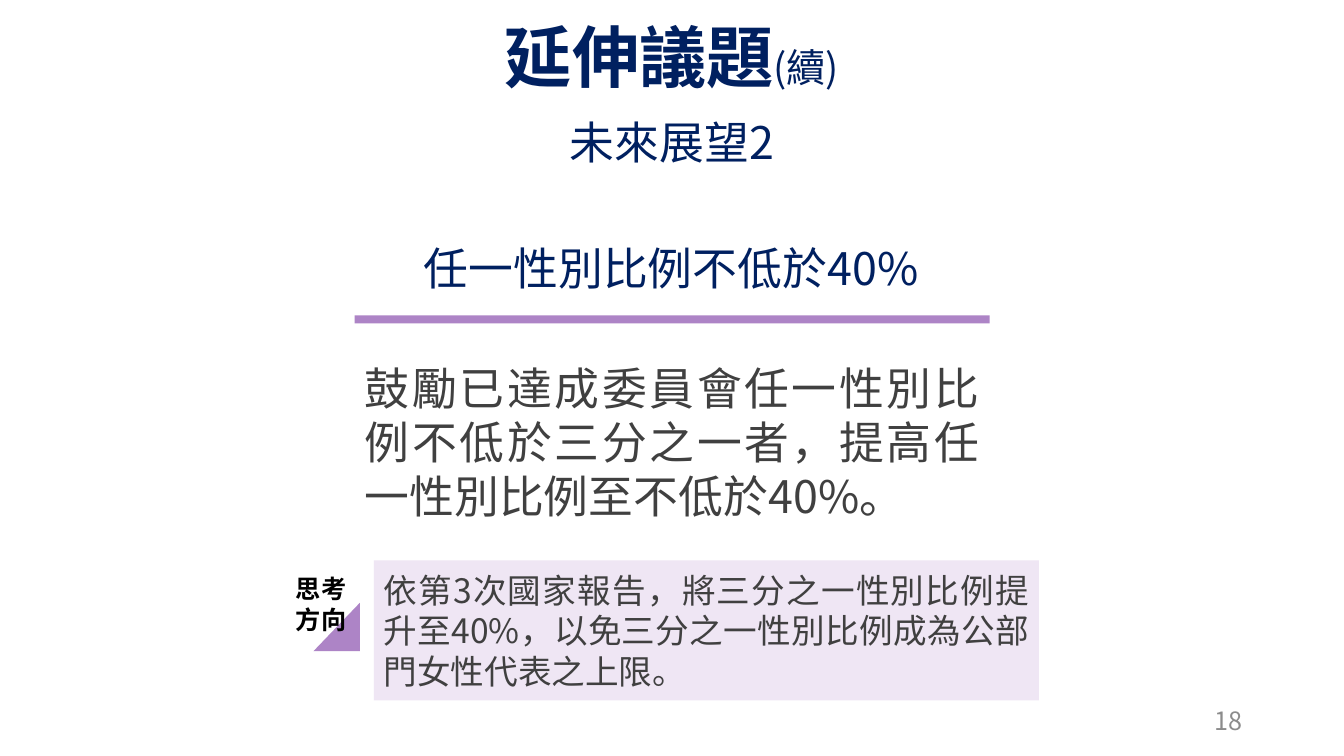
from lxml import etree
from pptx import Presentation
from pptx.dml.color import RGBColor
from pptx.enum.shapes import MSO_SHAPE
from pptx.enum.text import MSO_ANCHOR, PP_ALIGN
from pptx.oxml.ns import qn
from pptx.util import Cm, Pt

RECT, TRIANGLE = MSO_SHAPE.RECTANGLE, MSO_SHAPE.ISOSCELES_TRIANGLE
TOP, MIDDLE = MSO_ANCHOR.TOP, MSO_ANCHOR.MIDDLE
LEFT, CENTER = PP_ALIGN.LEFT, PP_ALIGN.CENTER
RIGHT, JUSTIFY = PP_ALIGN.RIGHT, PP_ALIGN.JUSTIFY

FACE = "Noto Sans CJK SC"
NAVY, PURPLE, LILAC = "002060", "AD84C6", "EFE6F4"
DARK, GRAY, BLACK = "404040", "8C8C8C", "000000"
WIDE, HIGH = 33.87, 19.05


def color(code):
    return RGBColor.from_string(code)


def style(font, size, code, bold=False):
    font.name = FACE
    font.size = Pt(size)
    font.bold = bold
    font.color.rgb = color(code)


def set_asian(props):
    """Use the same face for the Chinese text."""
    face = etree.Element(qn("a:ea"), typeface=FACE)
    props.find(qn("a:latin")).addnext(face)


def write(shape, text, size, code, align, anchor=TOP, bold=False):
    frame = shape.text_frame
    frame.word_wrap = True
    frame.vertical_anchor = anchor
    para = frame.paragraphs[0]
    para.alignment = align
    para.text = text
    style(para.font, size, code, bold)
    set_asian(para._p.pPr.find(qn("a:defRPr")))
    return para


def add_box(slide, *place):
    return slide.shapes.add_textbox(*map(Cm, place))


def add_block(slide, kind, code, *place):
    shape = slide.shapes.add_shape(kind, *map(Cm, place))
    shape.shadow.inherit = False
    shape.fill.solid()
    shape.fill.fore_color.rgb = color(code)
    shape.line.fill.background()
    return shape


def add_title(slide, parts, *place):
    frame = add_box(slide, *place).text_frame
    frame.word_wrap = True
    frame.vertical_anchor = MIDDLE
    para = frame.paragraphs[0]
    para.alignment = CENTER
    para.line_spacing = 0.9
    for text, size, bold in parts:
        run = para.add_run()
        run.text = text
        style(run.font, size, NAVY, bold)
        set_asian(run._r.rPr)


def add_head(slide, text, *place):
    para = write(add_box(slide, *place), text, 32, NAVY, CENTER)
    para.line_spacing = 0.9


def main():
    deck = Presentation()
    deck.slide_width, deck.slide_height = Cm(WIDE), Cm(HIGH)
    slide = deck.slides.add_slide(deck.slide_layouts[6])

    # Title and subtitle
    add_title(slide, [("延伸議題", 48, True), ("(續)", 28, False)],
              0, 0.46, WIDE, 2.13)
    add_head(slide, "未來展望2", 0, 2.92, WIDE, 1.07)

    # Goal with rule and text
    add_head(slide, "任一性別比例不低於40%", 10.21, 6.1, 13.41, 1.07)
    add_block(slide, RECT, PURPLE, 8.94, 7.95, 16, 0.2)
    write(add_box(slide, 8.94, 8.97, 16, 4.37),
          "鼓勵已達成委員會任一性別比例不低於三分之一者，"
          "提高任一性別比例至不低於40%。", 32, DARK, JUSTIFY)

    # Direction for thought
    note = add_block(slide, RECT, LILAC, 9.42, 14.12, 16.76, 3.53)
    write(note, "依第3次國家報告，將三分之一性別比例提升至40%，"
          "以免三分之一性別比例成為公部門女性代表之上限。",
          24, DARK, JUSTIFY, MIDDLE)
    corner = add_block(slide, TRIANGLE, PURPLE, 7.9, 15.19, 1.17, 1.22)
    corner.adjustments[0] = 1
    write(add_box(slide, 7.21, 14.33, 1.88, 1.96), "思考方向",
          18, BLACK, LEFT, bold=True)

    # Page number
    write(add_box(slide, 23.93, 17.65, 7.62, 1.02), "18",
          18, GRAY, RIGHT, MIDDLE)

    deck.save("out.pptx")


if __name__ == "__main__":
    main()
